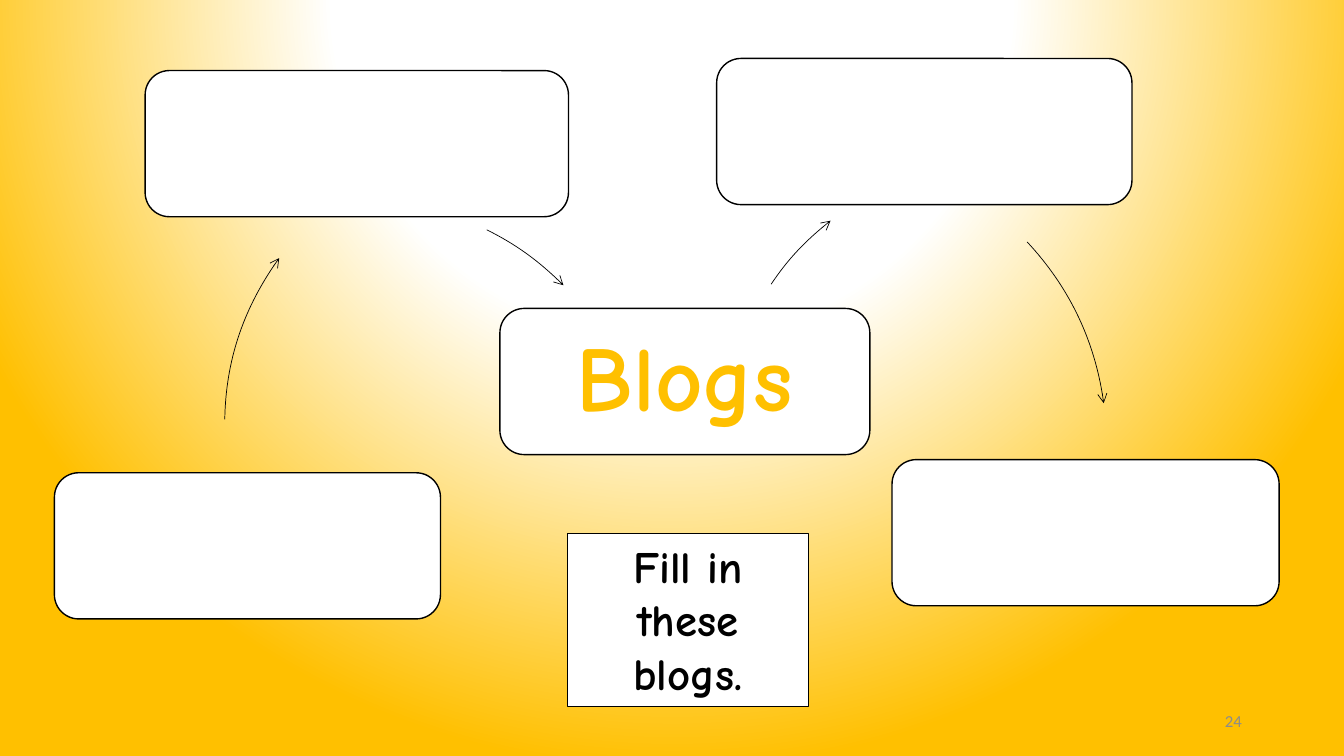
from dataclasses import dataclass

from lxml import etree
from pptx import Presentation, util as u
from pptx.dml.color import RGBColor
from pptx.enum import shapes, text
from pptx.oxml import ns, parse_xml

PX = 9144
RING = 581
COLORS = {"white": "FFFFFF", "gold": "FFC000", "black": "000000", "gray": "8C8C8C"}
ROUND = shapes.MSO_SHAPE.ROUNDED_RECTANGLE
RECT = shapes.MSO_SHAPE.RECTANGLE


@dataclass
class Box:
    left: int
    top: int
    width: int
    height: int = 145
    kind: shapes.MSO_SHAPE = ROUND
    line: float = 1

    def area(self) -> list[int]:
        return [n * PX for n in (self.left, self.top, self.width, self.height)]


@dataclass
class Curve:
    ring: tuple[int, int]
    start: tuple[int, int]
    bend: tuple[int, int]
    pull: tuple[int, int]
    end: tuple[int, int]


TOPIC = Box(496, 306, 367)
TASK = Box(563, 529, 239, 172, RECT, 0.75)
NUMBER = Box(942, 695, 300, 40)
BLANKS = [
    Box(711, 58, 412),
    Box(885, 456, 384),
    Box(54, 469, 383),
    Box(144, 70, 420),
]
CURVES = [
    Curve((712, 159), (765, 282), (781, 258), (801, 237), (824, 219)),
    Curve((517, 148), (1019, 240), (1060, 284), (1087, 340), (1095, 400)),
    Curve((222, 135), (223, 416), (224, 358), (243, 303), (277, 256)),
    Curve((63, 197), (483, 228), (511, 242), (536, 260), (559, 283)),
]


def rgb(name: str) -> RGBColor:
    return RGBColor.from_string(COLORS[name])


def paint(slide) -> None:
    slide.background.fill.gradient()
    old = next(slide.element.iter(ns.qn("a:gradFill")))
    stops = "".join(
        f'<a:gs pos="{pos * 1000}"><a:srgbClr val="{COLORS[name]}"/></a:gs>'
        for pos, name in ((0, "white"), (44, "white"), (100, "gold"))
    )
    new = parse_xml(
        f'<a:gradFill {ns.nsdecls("a")} rotWithShape="1"><a:gsLst>{stops}</a:gsLst>'
        '<a:path path="circle"><a:fillToRect l="50000" t="-80000" r="50000" b="180000"/>'
        "</a:path></a:gradFill>"
    )
    old.getparent().replace(old, new)


def draw_box(slide, box: Box):
    shape = slide.shapes.add_shape(box.kind, *box.area())
    shape.shadow.inherit = False
    shape.fill.solid()
    shape.fill.fore_color.rgb = rgb("white")
    shape.line.color.rgb = rgb("black")
    shape.line.width = u.Pt(box.line)
    return shape


def draw_curve(slide, curve: Curve) -> None:
    left, top = curve.ring
    points = [curve.start, curve.bend, curve.pull, curve.end]
    pen = slide.shapes.build_freeform(*curve.start, scale=PX)
    pen.add_line_segments(points[1:], close=False)
    shape = pen.convert_to_shape()
    shape.left, shape.top = left * PX, top * PX
    shape.width = shape.height = RING * PX
    shape.shadow.inherit = False
    shape.fill.background()
    shape.line.color.rgb = rgb("black")
    shape.line.width = u.Pt(0.5)
    route = next(shape.element.iter(ns.qn("a:path")))
    for side in ("w", "h"):
        route.set(side, str(RING))
    for spot, (x, y) in zip(route.iter(ns.qn("a:pt")), points):
        spot.set("x", str(x - left))
        spot.set("y", str(y - top))
    bezier = etree.SubElement(route, ns.qn("a:cubicBezTo"))
    for step in route.findall(ns.qn("a:lnTo")):
        bezier.append(step[0])
        route.remove(step)
    line = shape.element.spPr.find(ns.qn("a:ln"))
    etree.SubElement(line, ns.qn("a:tailEnd"), type="arrow")


def write(
    shape,
    words: str,
    *,
    size: int,
    color: str,
    font: str = "Comic Neue",
    bold: bool = True,
    align: text.PP_ALIGN = text.PP_ALIGN.CENTER,
    anchor: text.MSO_ANCHOR = text.MSO_ANCHOR.MIDDLE,
) -> None:
    frame = shape.text_frame
    frame.word_wrap = True
    frame.vertical_anchor = anchor
    para = frame.paragraphs[0]
    para.alignment = align
    run = para.add_run()
    run.text = words
    run.font.name = font
    run.font.size = u.Pt(size)
    run.font.bold = bold
    run.font.color.rgb = rgb(color)


def main() -> None:
    deck = Presentation()
    deck.slide_width = u.Inches(40 / 3)
    deck.slide_height = u.Inches(7.5)
    slide = deck.slides.add_slide(deck.slide_layouts[6])
    paint(slide)
    topic = draw_box(slide, TOPIC)
    write(topic, "Blogs", size=66, color="gold")
    topic.text_frame.paragraphs[0].line_spacing = 0.9
    for box in BLANKS:
        draw_box(slide, box)
    for curve in CURVES:
        draw_curve(slide, curve)
    write(draw_box(slide, TASK), "Fill in these blogs.", size=32, color="black",
          anchor=text.MSO_ANCHOR.TOP)
    number = slide.shapes.add_textbox(*NUMBER.area())
    write(number, "24", size=12, color="gray", font="Calibri", bold=False,
          align=text.PP_ALIGN.RIGHT)
    deck.save("out.pptx")


if __name__ == "__main__":
    main()
